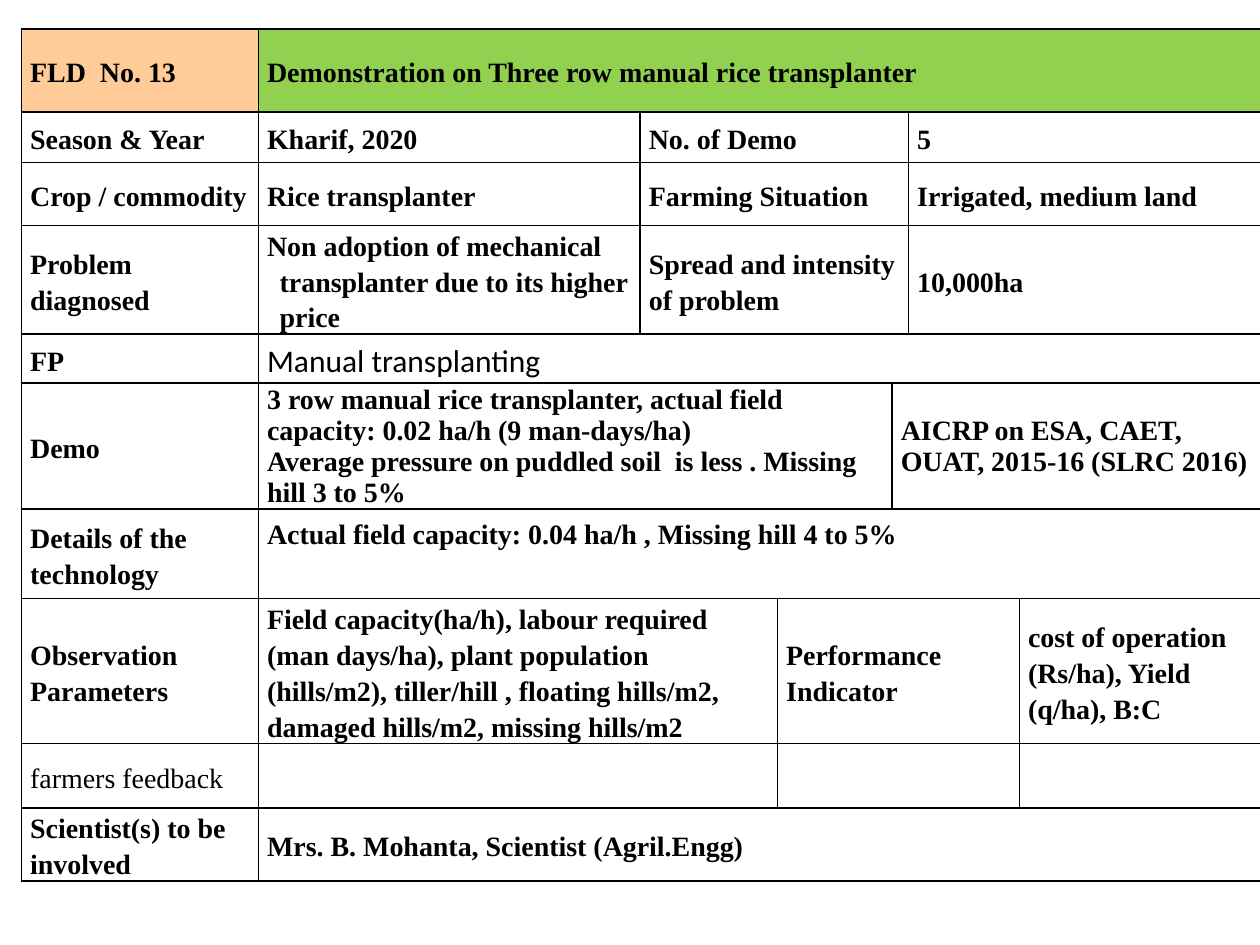
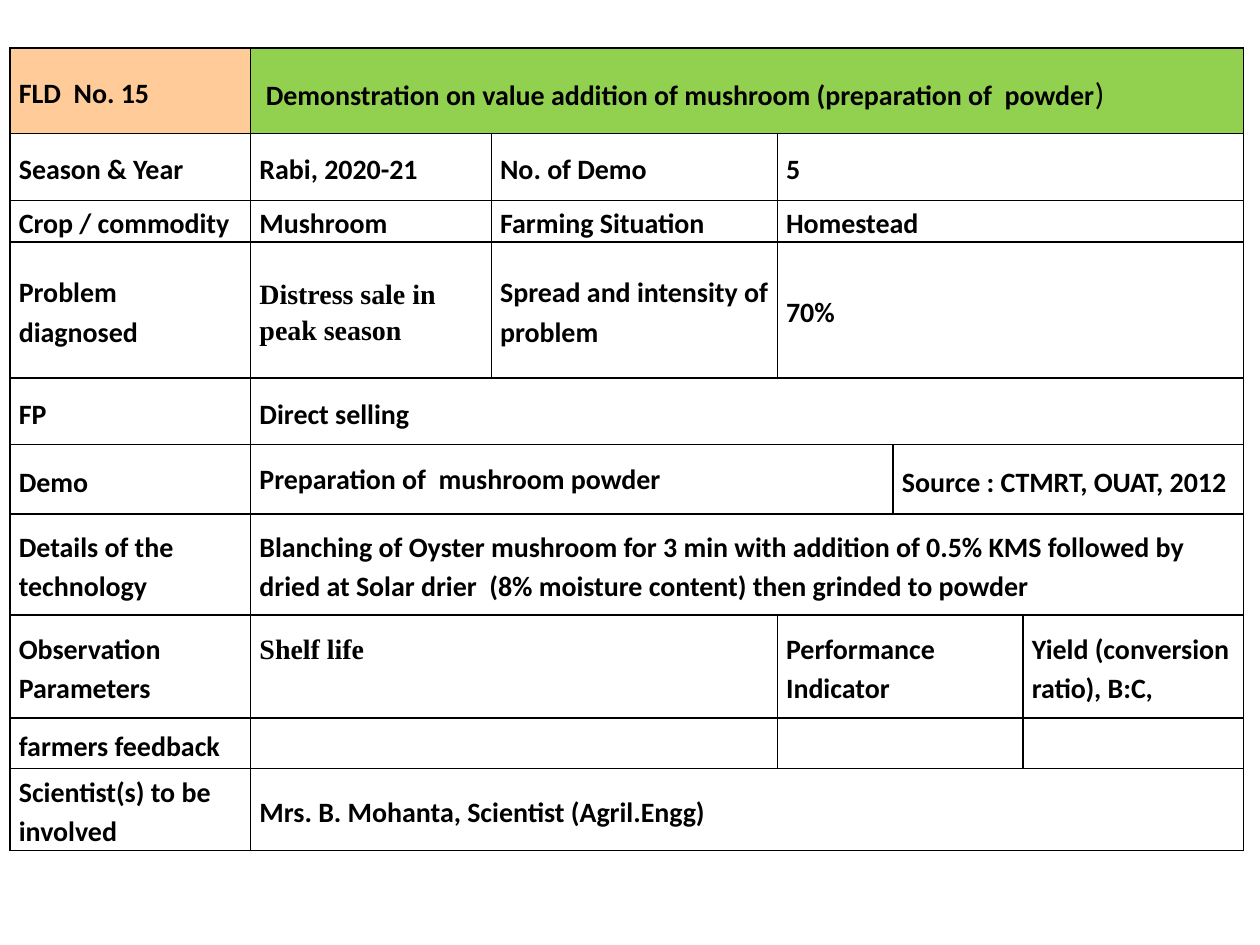
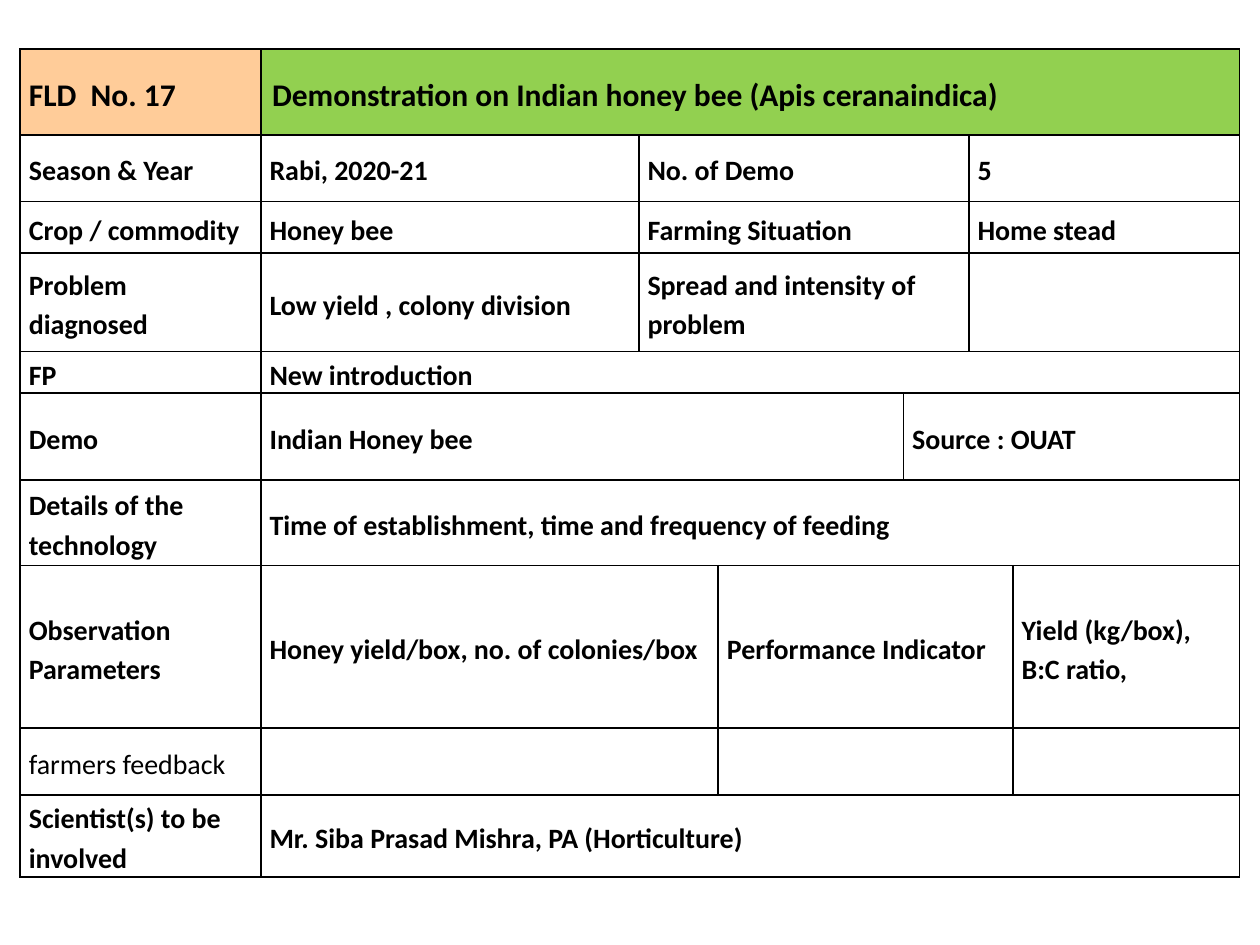
from lxml import etree
from pptx import Presentation
from pptx import util as u
from pptx.dml import color
from pptx.enum import text
from pptx.oxml import ns

# Grid: 1000 columns by 750 rows on a 10 x 7.5 inch slide
UNIT = u.Inches(10) // 1000
MARGINS = {"margin_left": 7, "margin_right": 7, "margin_top": 1, "margin_bottom": 0}
LABEL_FILL, TITLE_FILL, INK = "FFCC99", "92D050", "000000"
SERIF, SANS = "Times New Roman", "Calibri"

# Row pattern and labels shared by every sheet
KINDS = ["wide", "trio", "trio", "trio", "wide", "demo", "wide", "observe", "observe", "wide"]
LABELS = ["Season & Year", "Crop / commodity", "Problem  diagnosed", "FP", "Demo",
          "Details of the technology", "Observation Parameters", "farmers feedback",
          "Scientist(s) to be involved"]
DEMOS, SITUATION = "No. of Demo", "Farming Situation"
SPREAD, INDICATOR = "Spread and intensity of problem", "Performance Indicator"
SPANS = {"wide": [6], "trio": [1, 3, 2], "demo": [3, 3], "observe": [2, 3, 1]}
NARROW_SPANS = {"wide": [5], "trio": [1, 1, 3], "demo": [3, 2], "observe": [2, 2, 1]}
NO_FEEDBACK = ["", "", ""]


def rgb(value):
    return color.RGBColor.from_string(value)


class Deck:
    """Holds the style and the current slide."""

    def __init__(self):
        self.prs = Presentation()
        self.prs.slide_width, self.prs.slide_height = 1000 * UNIT, 750 * UNIT
        self.font, self.size = SANS, 16

    def new_slide(self, font):
        self.font = font
        self.s = self.prs.slides.add_slide(self.prs.slide_layouts[6])

    def borders(self, cell):
        tcPr = cell._tc.get_or_add_tcPr()
        for i, side in enumerate(["lnL", "lnR", "lnT", "lnB"]):
            ln = etree.Element(ns.qn("a:" + side), w=str(u.Pt(1)))
            fill = etree.SubElement(ln, ns.qn("a:solidFill"))
            etree.SubElement(fill, ns.qn("a:srgbClr"), val=INK)
            tcPr.insert(i, ln)

    def run(self, p, words, size=None, bold=True, font=None):
        r = p.add_run()
        r.text = words
        r.font.color.rgb = rgb(INK)
        style = {"size": u.Pt(size or self.size), "bold": bold, "name": font or self.font}
        for name, value in style.items():
            setattr(r.font, name, value)

    def cell_text(self, cell, content, fill=None):
        """Content is a string, or a pair of a string and its options."""
        words, options = content if isinstance(content, tuple) else (content, {})
        options = dict(options)
        left, indent = options.pop("indent", (0, 0))
        spacing = options.pop("spacing", 1.15)
        tail = options.pop("tail", None)
        cell.margin_bottom = options.pop("lift", 0) * UNIT
        if fill:
            cell.fill.solid()
            cell.fill.fore_color.rgb = rgb(fill)
        for i, line in enumerate(words.split("\n") if words else []):
            p = cell.text_frame.add_paragraph() if i else cell.text_frame.paragraphs[0]
            p.line_spacing = spacing
            if left:
                pPr = p._p.get_or_add_pPr()
                pPr.set("marL", str(left * UNIT))
                pPr.set("indent", str(indent * UNIT))
            self.run(p, line, **options)
            if tail:
                self.run(p, tail[0], **tail[1])

    def sheet(self, at, cols, rows, spans, content):
        """Draws one table whose first column is the label of each row."""
        x, y = at
        frame = self.s.shapes.add_table(len(rows), len(cols), x * UNIT, y * UNIT,
                                        sum(cols) * UNIT, sum(rows) * UNIT)
        table = frame.table
        table.first_row = table.horz_banding = False
        for column, width in zip(table.columns, cols):
            column.width = width * UNIT
        for row, height in zip(table.rows, rows):
            row.height = height * UNIT
        for cell in table.iter_cells():
            cell.fill.background()
            cell.vertical_anchor = text.MSO_ANCHOR.MIDDLE
            for name, value in MARGINS.items():
                setattr(cell, name, value * UNIT)
            self.borders(cell)
        for r, (kind, (label, *values)) in enumerate(zip(KINDS, content)):
            self.cell_text(table.cell(r, 0), label, LABEL_FILL if r == 0 else None)
            c = 1
            for span, value in zip(spans[kind], values):
                cell = table.cell(r, c)
                if span > 1:
                    cell.merge(table.cell(r, c + span - 1))
                self.cell_text(cell, value, TITLE_FILL if r == 0 else None)
                c += span


def labelled(heading, values, plain_feedback=True):
    """Puts the shared labels before the values of each row."""
    labels = [(name, {"bold": False}) if plain_feedback and name == "farmers feedback" else name
              for name in LABELS]
    return [heading] + [[label, *row] for label, row in zip(labels, values)]


def main():
    deck = Deck()

    # Rice transplanter
    deck.new_slide(SERIF)
    deck.sheet(
        (17, 23), [188, 303, 109, 91, 13, 88, 192],
        [66, 40, 50, 86, 39, 100, 71, 115, 51, 58], SPANS,
        labelled(
            ["FLD  No. 13",
             ("Demonstration on Three row manual rice transplanter", {"indent": (50, -50)})],
            [["Kharif, 2020", DEMOS, "5"],
             ["Rice transplanter", SITUATION, "Irrigated, medium land"],
             [("Non adoption of mechanical transplanter due to its higher price",
               {"indent": (10, -10)}), SPREAD, "10,000ha"],
             [("Manual transplanting", {"size": 18, "bold": False, "font": SANS})],
             [("3 row manual rice transplanter, actual field capacity: 0.02 ha/h (9 man-days/ha)\n"
               "Average pressure on puddled soil  is less . Missing hill 3 to 5%", {"spacing": 1}),
              ("AICRP on ESA, CAET, OUAT, 2015-16 (SLRC 2016)", {"spacing": 1})],
             [("Actual field capacity: 0.04 ha/h , Missing hill 4 to 5%", {"lift": 35})],
             ["Field capacity(ha/h), labour required  (man days/ha), plant population "
              "(hills/m2), tiller/hill , floating hills/m2, damaged hills/m2, missing hills/m2",
              INDICATOR, "cost of operation (Rs/ha), Yield (q/ha), B:C"],
             NO_FEEDBACK,
             ["Mrs. B. Mohanta, Scientist (Agril.Engg)"]]))

    # Mushroom powder
    deck.new_slide(SANS)
    deck.sheet(
        (8, 38), [191, 191, 227, 92, 103, 175],
        [68, 53, 33, 108, 53, 55, 80, 82, 40, 65], NARROW_SPANS,
        labelled(
            ["FLD  No. 15",
             (" Demonstration on value addition of mushroom (preparation of  powder",
              {"tail": (")", {"size": 18, "bold": False})})],
            [["Rabi, 2020-21", DEMOS, "5"],
             ["Mushroom", SITUATION, "Homestead"],
             [("Distress sale in peak season", {"font": SERIF}), SPREAD, "70%"],
             ["Direct selling"],
             [("Preparation of  mushroom powder", {"spacing": 1}), "Source : CTMRT, OUAT, 2012"],
             ["Blanching of Oyster mushroom for 3 min with addition of 0.5% KMS followed by "
              "dried at Solar drier  (8% moisture content) then grinded to powder"],
             [("Shelf life", {"font": SERIF, "lift": 31}), INDICATOR,
              "Yield (conversion ratio), B:C,"],
             NO_FEEDBACK,
             ["Mrs. B. Mohanta, Scientist (Agril.Engg)"]],
            plain_feedback=False))

    # Indian honey bee
    deck.new_slide(SANS)
    deck.sheet(
        (16, 39), [191, 300, 63, 147, 52, 35, 180],
        [68, 53, 41, 78, 33, 69, 68, 129, 53, 65], SPANS,
        labelled(
            [("FLD  No. 17", {"size": 18}),
             ("Demonstration on Indian honey bee (Apis ceranaindica)",
              {"size": 18, "indent": (2, 0)})],
            [["Rabi, 2020-21", DEMOS, "5"],
             ["Honey bee", SITUATION, "Home stead"],
             ["Low yield , colony division", SPREAD, ""],
             ["New introduction"],
             ["Indian Honey bee", "Source : OUAT"],
             ["Time of establishment, time and frequency of feeding"],
             ["Honey yield/box, no. of colonies/box", INDICATOR, "Yield (kg/box), B:C ratio,"],
             NO_FEEDBACK,
             ["Mr. Siba Prasad Mishra, PA (Horticulture)"]]))

    deck.prs.save("out.pptx")


if __name__ == "__main__":
    main()
